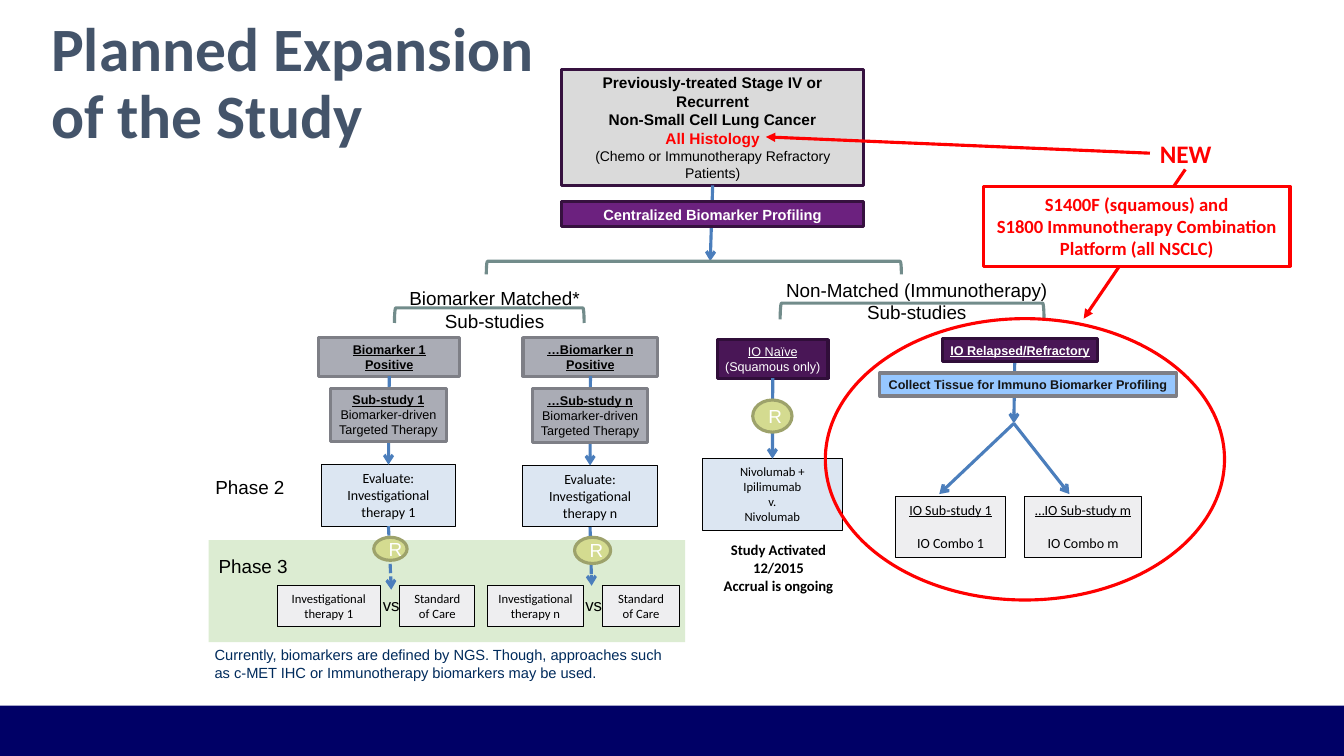
from dataclasses import dataclass

from lxml.etree import SubElement
from pptx import Presentation
from pptx.dml.color import RGBColor
from pptx.enum.dml import MSO_LINE_DASH_STYLE as Dash
from pptx.enum.shapes import MSO_CONNECTOR_TYPE as ConnectorType
from pptx.enum.shapes import MSO_SHAPE as Preset
from pptx.enum.text import MSO_ANCHOR as Anchor
from pptx.enum.text import PP_ALIGN as Align
from pptx.oxml.ns import qn
from pptx.util import Cm, Pt

BOTTOM, TOP = 2, 0


@dataclass(frozen=True)
class Theme:
    heading: str = "Calibri"
    body: str = "Arial"
    black: str = "000000"
    white: str = "FFFFFF"
    red: str = "FF0000"
    title: str = "44546A"
    footer: str = "000066"
    note: str = "002B5C"
    arrow: str = "4B7EBC"
    bracket: str = "728C8B"
    phase_panel: str = "C5E0B4"
    dark_text: str = "161616"
    title_size: float = 44
    new_size: float = 18
    callout_size: float = 13.3
    label_size: float = 13.5
    versus_size: float = 12
    patient_size: float = 11
    note_size: float = 10.5
    medium_size: float = 10
    small_size: float = 9
    heavy: float = 2.25
    thin: float = 0.75


@dataclass(frozen=True)
class Look:
    fill: str
    line: str = ""
    width: float = 0


THEME = Theme()
GREY = Look("AAACB5", "7E7F86", THEME.heavy)
PURPLE = Look("491656", "300E39", THEME.heavy)
PROFILING = Look("6C217F", "36113F", THEME.heavy)
PATIENTS = Look("DADADA", "36113F", THEME.heavy)
TISSUE = Look("96C7FF", "7E7F86", THEME.heavy)
RANDOMISE = Look("D4DB90", "9DA26B", THEME.heavy)
EVALUATE = Look("DCE6F2", THEME.black, THEME.thin)
TREATMENT = Look("EEEEF0", THEME.black, THEME.thin)
CALLOUT = Look(THEME.white, THEME.red, THEME.heavy)
RING = Look("", THEME.red, THEME.heavy)
BRACKET = Look("", THEME.bracket, THEME.heavy)
TIGHT = (0.18, 0.1)
NORMAL = (0.25, 0.13)


def rgb(value):
    return RGBColor.from_string(value)


def add_text(frame, text, size=THEME.small_size, font=THEME.body, color=THEME.black,
             bold=False, underline=False, align=Align.CENTER, before=0, spacing=None):
    first = frame.paragraphs[0]
    paragraph = frame.add_paragraph() if first.runs else first
    paragraph.text = text
    paragraph.alignment = align
    if before:
        paragraph.space_before = Pt(before)
    if spacing:
        paragraph.line_spacing = spacing
    for run in paragraph.runs:
        run.font.size = Pt(size)
        run.font.name = font
        run.font.bold = bold
        run.font.underline = underline
        run.font.color.rgb = rgb(color)


def fill_frame(frame, lines, insets=NORMAL, wrap=True, anchor=Anchor.TOP, **style):
    frame.word_wrap = wrap
    frame.vertical_anchor = anchor
    frame.margin_left = frame.margin_right = Cm(insets[0])
    frame.margin_top = frame.margin_bottom = Cm(insets[1])
    for line in lines:
        text, changes = (line, {}) if isinstance(line, str) else line
        add_text(frame, text, **{**style, **changes})


def add_box(slide, place, look, *lines, preset=Preset.RECTANGLE, **style):
    shape = slide.shapes.add_shape(preset, *map(Cm, place))
    shape.shadow.inherit = False
    if look.fill:
        shape.fill.solid()
        shape.fill.fore_color.rgb = rgb(look.fill)
    else:
        shape.fill.background()
    if look.line:
        shape.line.color.rgb = rgb(look.line)
        shape.line.width = Pt(look.width)
    else:
        shape.line.fill.background()
    if lines:
        fill_frame(shape.text_frame, lines, **style)
    return shape


def add_label(slide, place, *lines, **style):
    fill_frame(slide.shapes.add_textbox(*map(Cm, place)).text_frame, lines, **style)


def add_arrow(slide, start, end, color=THEME.arrow, head="arrow", dashed=False,
              source=None, target=None):
    arrow = slide.shapes.add_connector(ConnectorType.STRAIGHT, *map(Cm, start + end))
    if source:
        arrow.begin_connect(source, BOTTOM)
    if target:
        arrow.end_connect(target, TOP)
    arrow.line.color.rgb = rgb(color)
    arrow.line.width = Pt(THEME.heavy)
    if dashed:
        arrow.line.dash_style = Dash.SQUARE_DOT
    properties = arrow._element.spPr
    SubElement(properties.find(qn("a:ln")), qn("a:tailEnd"), type=head)
    SubElement(properties, qn("a:effectLst"))


def add_bracket(slide, place):
    bracket = add_box(slide, place, BRACKET, preset=Preset.LEFT_BRACKET)
    bracket.rotation = 90


def add_randomisation(slide, place):
    add_box(slide, place, RANDOMISE, "R", preset=Preset.OVAL, anchor=Anchor.MIDDLE,
            size=THEME.label_size, color=THEME.white)


def add_title(slide):
    title = slide.shapes.title
    title.left, title.top, title.width, title.height = map(Cm, (1.04, 0.3, 29.21, 3.68))
    fill_frame(title.text_frame, ["Planned Expansion\vof the Study"], anchor=Anchor.MIDDLE,
               size=THEME.title_size, font=THEME.heading, color=THEME.title, bold=True,
               align=Align.LEFT, spacing=0.9)


def add_biomarker_arm(slide, name, headings, sub_study, biomarker_place, sub_place,
                      evaluate_place, dash_end, circle, arms, versus):
    strong = {"bold": True, "underline": True}
    biomarker = add_box(slide, biomarker_place, GREY, *headings, insets=TIGHT, **strong)
    evaluate = add_box(slide, evaluate_place, EVALUATE,
                       f"Evaluate: Investigational therapy {name}",
                       size=THEME.medium_size, font=THEME.heading)
    add_arrow(slide, (0, 0), (0, 0), source=biomarker, target=evaluate)
    add_box(slide, sub_place, GREY, (sub_study, strong), "Biomarker-driven",
            "Targeted Therapy", insets=TIGHT, wrap=False)
    add_arrow(slide, (0, 0), dash_end, dashed=True, source=evaluate)
    add_randomisation(slide, circle)
    for (left, width), text in zip(arms, (f"Investigational therapy {name}", "Standard of Care")):
        add_box(slide, (left, 14.76, width, 1.02), TREATMENT, text, font=THEME.heading)
    add_label(slide, (versus, 14.86, 1.04, 0.76), "vs", size=THEME.versus_size, align=Align.LEFT)


def add_entry(slide):
    patients = add_box(
        slide, (14.15, 1.75, 7.62, 2.92), PATIENTS,
        "Previously-treated Stage IV or Recurrent", "Non-Small Cell Lung Cancer",
        ("All Histology", {"color": THEME.red}),
        ("(Chemo or Immunotherapy Refractory Patients)",
         {"size": THEME.medium_size, "bold": False}),
        insets=TIGHT, size=THEME.patient_size, bold=True)
    add_arrow(slide, (0, 0), (17.9, 6.58), source=patients)
    add_box(slide, (14.15, 5.08, 7.62, 0.64), PROFILING, "Centralized Biomarker Profiling",
            insets=TIGHT, size=THEME.note_size, color=THEME.white, bold=True)
    for place in ((17.32, 1.52, 0.33, 10.46), (12.14, 5.56, 0.38, 4.78), (22.78, 4.52, 0.41, 6.65)):
        add_bracket(slide, place)
    add_label(slide, (9.47, 7.09, 5.99, 1.42), "Biomarker Matched*", "Sub-studies",
              size=THEME.label_size)
    add_label(slide, (19.46, 6.88, 7.29, 1.42), "Non-Matched (Immunotherapy)", "Sub-studies",
              size=THEME.label_size)


def add_naive_arm(slide):
    naive = add_box(slide, (18.08, 8.56, 2.79, 0.97), PURPLE, ("IO Naïve", {"underline": True}),
                    "(Squamous only)", insets=TIGHT, wrap=False, color=THEME.white)
    treatment = add_box(slide, (17.7, 11.56, 3.53, 1.8), EVALUATE, "Nivolumab + Ipilimumab",
                        "v.", "Nivolumab", font=THEME.heading)
    add_arrow(slide, (0, 0), (0, 0), source=naive, target=treatment)
    add_randomisation(slide, (18.97, 10.08, 0.99, 0.81))
    add_label(slide, (17.88, 13.51, 3.48, 1.6), "Study Activated 12/2015\vAccrual is ongoing",
              size=THEME.note_size, font=THEME.heading, bold=True)


def add_relapsed_arm(slide):
    fork = (25.55, 10.67)
    add_arrow(slide, (25.58, 8.53), fork)
    add_box(slide, (23.75, 8.53, 3.91, 0.58), PURPLE, "IO Relapsed/Refractory", insets=TIGHT,
            wrap=False, color=THEME.white, bold=True, underline=True)
    add_box(slide, (22.17, 9.4, 7.47, 0.58), TISSUE,
            "Collect Tissue for Immuno Biomarker Profiling", insets=TIGHT, wrap=False,
            color=THEME.dark_text, bold=True)
    for tip, left, width, heading, combo in ((23.67, 22.56, 2.79, "IO Sub-study 1", "IO Combo 1"),
                                             (26.95, 25.81, 2.97, "…IO Sub-study m", "IO Combo m")):
        add_arrow(slide, fork, (tip, 12.45))
        add_box(slide, (left, 12.5, width, 1.55), TREATMENT, (heading, {"underline": True}),
                (combo, {"before": 12}), size=THEME.medium_size, font=THEME.heading)


def add_news(slide):
    add_arrow(slide, (29.87, 4.27), (27.31, 8.03), color=THEME.red, head="triangle")
    add_box(slide, (24.79, 4.7, 7.72, 2.01), CALLOUT, "S1400F (squamous) and",
            "S1800 Immunotherapy Combination", "Platform (all NSCLC)", insets=(0.28, 0.15),
            wrap=False, size=THEME.callout_size, font=THEME.heading, color=THEME.red, bold=True)
    add_box(slide, (20.8, 8.03, 10.06, 7.09), RING, preset=Preset.OVAL)
    add_arrow(slide, (28.98, 3.86), (19.3, 3.45), color=THEME.red, head="triangle")
    add_label(slide, (28.98, 3.35, 2.18, 1.02), "NEW", size=THEME.new_size, font=THEME.heading,
              color=THEME.red, bold=True, align=Align.LEFT)


def main():
    presentation = Presentation()
    presentation.slide_width, presentation.slide_height = Cm(33.87), Cm(19.05)
    slide = presentation.slides.add_slide(presentation.slide_layouts[5])
    add_box(slide, (0, 17.78, 33.87, 1.27), Look(THEME.footer))
    add_title(slide)
    panel = add_box(slide, (5.26, 13.61, 12.01, 2.57), Look(THEME.phase_panel))
    panel_color = panel._element.spPr.find(qn("a:solidFill"))[0]
    SubElement(panel_color, qn("a:alpha"), val="60000")
    add_entry(slide)
    add_biomarker_arm(slide, "1", ("Biomarker 1", "Positive"), "Sub-study 1",
                      (8.03, 8.51, 3.56, 0.97), (8.33, 9.78, 2.92, 1.35),
                      (8.1, 11.71, 3.38, 1.55), (9.86, 14.86), (9.42, 13.54, 0.84, 0.58),
                      ((6.99, 2.59), (10.08, 1.88)), 9.4)
    add_biomarker_arm(slide, "n", ("…Biomarker n Positive",), "…Sub-study n",
                      (13.18, 8.51, 3.4, 0.97), (13.41, 9.8, 2.92, 1.35),
                      (13.18, 11.73, 3.38, 1.55), (14.91, 14.76), (14.48, 13.54, 0.91, 0.66),
                      ((12.29, 2.41), (15.19, 1.93)), 14.5)
    add_naive_arm(slide)
    add_relapsed_arm(slide)
    for place, text in (((5.18, 11.86, 2.49, 0.84), "Phase 2"), ((5.26, 13.84, 2.29, 0.84), "Phase 3")):
        add_label(slide, place, text, size=THEME.label_size, align=Align.LEFT)
    add_label(slide, (5.16, 16.15, 12.12, 1.14),
              "Currently, biomarkers are defined by NGS. Though, approaches such as c-MET IHC "
              "or Immunotherapy biomarkers may be used.",
              size=THEME.note_size, color=THEME.note, align=Align.LEFT)
    add_news(slide)
    presentation.save("out.pptx")


if __name__ == "__main__":
    main()
